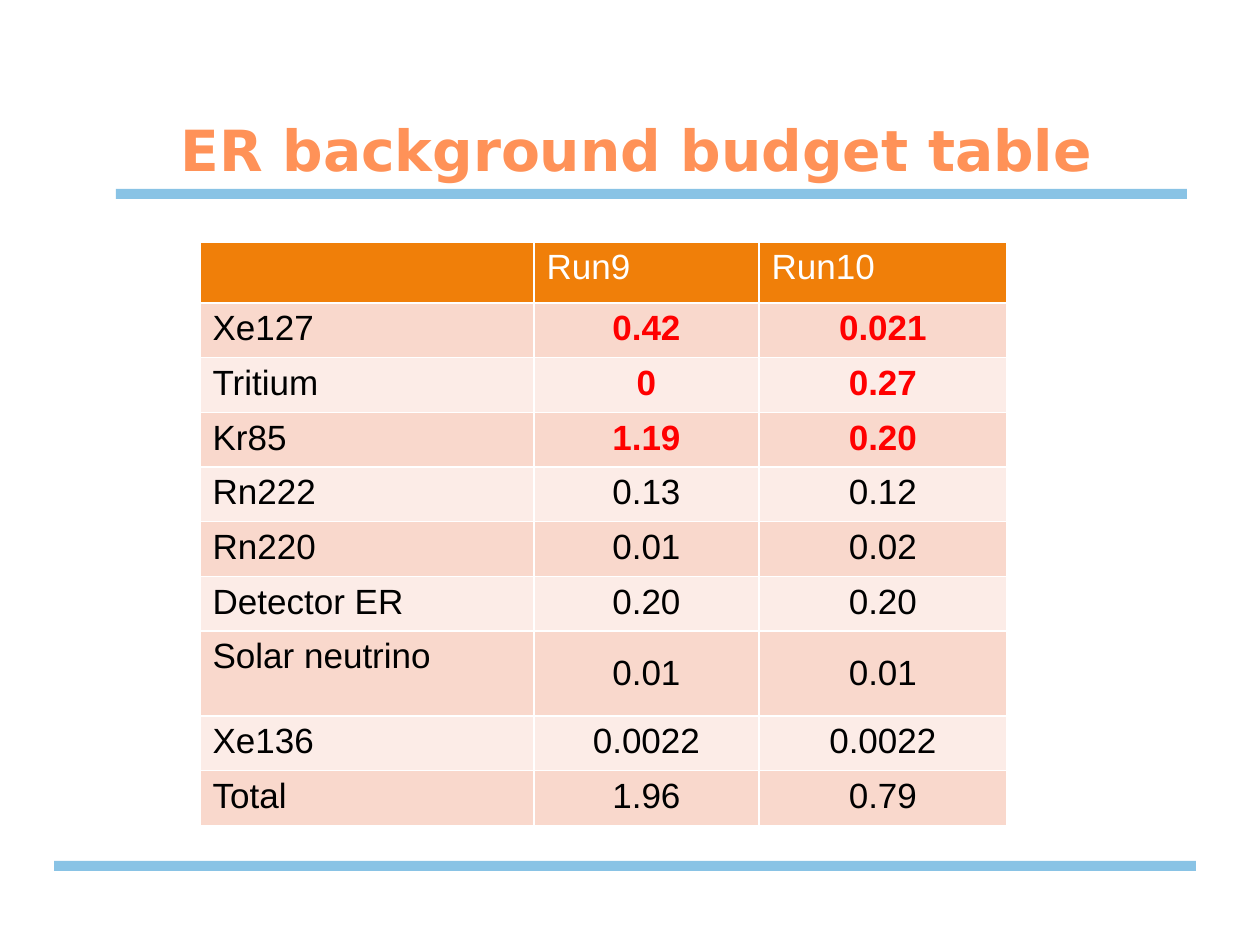
from lxml.etree import SubElement
from pptx import Presentation
from pptx.dml.color import RGBColor
from pptx.enum.shapes import MSO_SHAPE
from pptx.enum.text import MSO_ANCHOR, PP_ALIGN
from pptx.oxml.ns import qn
from pptx.util import Pt

PX = 914400 // 126
COLORS = {"rule": "89C3E5", "title": "FF9258", "header": "F07F09",
          "odd": "F9D8CC", "even": "FCECE7", "white": "FFFFFF",
          "black": "000000", "red": "FF0000"}

TITLE = "ER background budget table"
TITLE_BOX = (168, 53, 1023, 136)
RULES = [(116, 189, 1071, 10), (54, 861, 1142, 10)]
ROWS = [
    ("", "Run9", "Run10"),
    ("Xe127", "0.42", "0.021"),
    ("Tritium", "0", "0.27"),
    ("Kr85", "1.19", "0.20"),
    ("Rn222", "0.13", "0.12"),
    ("Rn220", "0.01", "0.02"),
    ("Detector ER", "0.20", "0.20"),
    ("Solar neutrino", "0.01", "0.01"),
    ("Xe136", "0.0022", "0.0022"),
    ("Total", "1.96", "0.79"),
]
HIGHLIGHTED = {"Xe127", "Tritium", "Kr85"}
TALL = "Solar neutrino"
TABLE_LEFT, TABLE_TOP = 200, 242
COLUMN_WIDTHS = [334, 225, 248]
HEADER_HEIGHT, ROW_HEIGHT, TALL_HEIGHT = 61, 51, 85


def color(name):
    return RGBColor.from_string(COLORS[name])


def scaled(*lengths):
    return [length * PX for length in lengths]


def write(para, text, color_name, **font_format):
    span = para.add_run()
    span.text = text
    span.font.color.rgb = color(color_name)
    for name, value in font_format.items():
        setattr(span.font, name, value)


def add_borders(cell):
    """Draw white lines on all four sides; they must precede the fill in the XML."""
    properties = cell._tc.get_or_add_tcPr()
    for side in ("lnL", "lnR", "lnT", "lnB"):
        line = SubElement(properties, qn(f"a:{side}"), w=str(Pt(1)))
        fill = SubElement(line, qn("a:solidFill"))
        SubElement(fill, qn("a:srgbClr"), val=COLORS["white"])


def add_rule(page, bounds):
    rule = page.shapes.add_shape(MSO_SHAPE.RECTANGLE, *scaled(*bounds))
    rule.shadow.inherit = False
    rule.fill.solid()
    rule.fill.fore_color.rgb = color("rule")
    rule.line.fill.background()


def add_title(page):
    frame = page.shapes.add_textbox(*scaled(*TITLE_BOX)).text_frame
    frame.word_wrap = True
    frame.vertical_anchor = MSO_ANCHOR.BOTTOM
    write(frame.paragraphs[0], TITLE, "title", name="DejaVu Sans", size=Pt(32.4), bold=True)


def add_budget_table(page):
    heights = [HEADER_HEIGHT] + [TALL_HEIGHT if row[0] == TALL else ROW_HEIGHT
                                 for row in ROWS[1:]]
    bounds = scaled(TABLE_LEFT, TABLE_TOP, sum(COLUMN_WIDTHS), sum(heights))
    table = page.shapes.add_table(len(ROWS), len(COLUMN_WIDTHS), *bounds).table
    for column, width in zip(table.columns, COLUMN_WIDTHS):
        column.width = width * PX
    for row, height in zip(table.rows, heights):
        row.height = height * PX

    for r, texts in enumerate(ROWS):
        fill = "header" if r == 0 else "odd" if r % 2 else "even"
        for c, text in enumerate(texts):
            cell = table.cell(r, c)
            add_borders(cell)
            cell.fill.solid()
            cell.fill.fore_color.rgb = color(fill)
            is_value = r > 0 and c > 0
            is_key = is_value and texts[0] in HIGHLIGHTED
            if is_value and texts[0] == TALL:
                cell.vertical_anchor = MSO_ANCHOR.MIDDLE
            para = cell.text_frame.paragraphs[0]
            para.alignment = PP_ALIGN.CENTER if is_value else PP_ALIGN.LEFT
            if text:
                ink = "white" if r == 0 else "red" if is_key else "black"
                write(para, text, ink, name="Arial", size=Pt(20), bold=is_key)


def main():
    deck = Presentation()
    deck.slide_width, deck.slide_height = scaled(1260, 945)
    page = deck.slides.add_slide(deck.slide_layouts[6])
    for bounds in RULES:
        add_rule(page, bounds)
    add_title(page)
    add_budget_table(page)
    deck.save("out.pptx")


if __name__ == "__main__":
    main()
